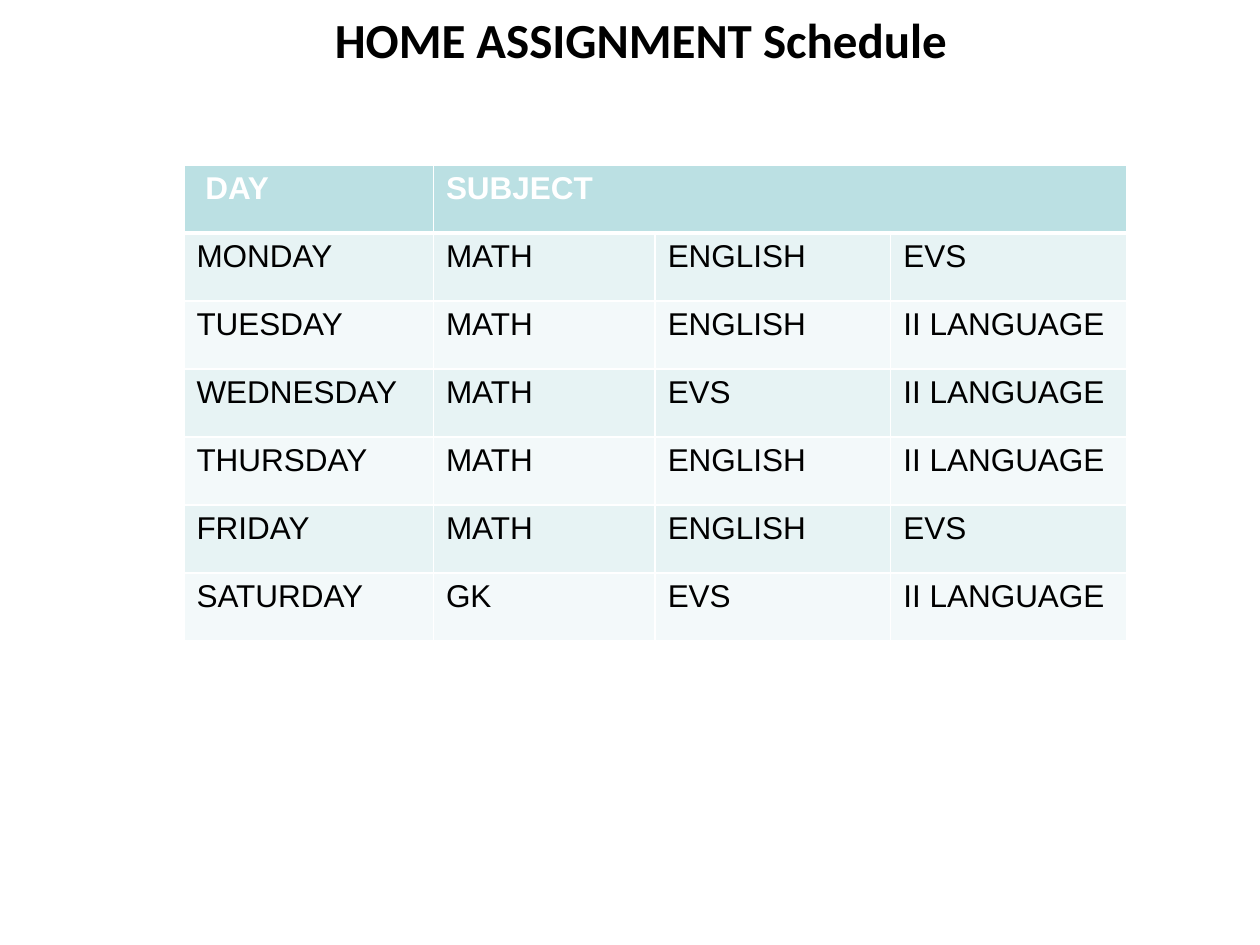
import pptx
import pptx.dml.color
import pptx.enum.text
import pptx.oxml.ns
import pptx.util
from lxml import etree

# Content
TITLE = "HOME ASSIGNMENT Schedule"
HEADER = (" DAY", "SUBJECT", "", "")
SCHEDULE = [
    ("MONDAY", "MATH", "ENGLISH", "EVS"),
    ("TUESDAY", "MATH", "ENGLISH", "II LANGUAGE"),
    ("WEDNESDAY", "MATH", "EVS", "II LANGUAGE"),
    ("THURSDAY", "MATH", "ENGLISH", "II LANGUAGE"),
    ("FRIDAY", "MATH", "ENGLISH", "EVS"),
    ("SATURDAY", "GK", "EVS", "II LANGUAGE"),
]
COLORS = {"black": "000000", "white": "FFFFFF", "header": "BBE0E3",
          "odd": "E7F3F4", "even": "F3F9FA"}

# Layout in inches
SLIDE_SIZE = (10, 7.5)
LEFT = 1.46
TITLE_BOX = (LEFT, 0.03, 7.25, 0.57)
TABLE_TOP = 1.31
COLUMN_WIDTHS = (1.98, 1.76, 1.87, 1.87)
ROW_HEIGHT = 0.54


def inches(values):
    return [pptx.util.Inches(value) for value in values]


def rgb(name):
    return pptx.dml.color.RGBColor.from_string(COLORS[name])


def style_text(paragraph, font_name, size, color, bold):
    for run in paragraph.runs:
        run.font.name = font_name
        run.font.size = pptx.util.Pt(size)
        run.font.bold = bold
        run.font.color.rgb = rgb(color)


def add_borders(cell, widths):
    """Draw white borders; widths maps each side's tag to points."""
    properties = cell._tc.get_or_add_tcPr()
    for tag, points in widths.items():
        line = etree.SubElement(properties, pptx.oxml.ns.qn(f"a:{tag}"),
                                w=str(pptx.util.Pt(points)))
        fill = etree.SubElement(line, pptx.oxml.ns.qn("a:solidFill"))
        etree.SubElement(fill, pptx.oxml.ns.qn("a:srgbClr"), val=COLORS["white"])


def add_title(slide):
    text_frame = slide.shapes.add_textbox(*inches(TITLE_BOX)).text_frame
    text_frame.word_wrap = True
    text_frame.text = TITLE
    paragraph = text_frame.paragraphs[0]
    paragraph.alignment = pptx.enum.text.PP_ALIGN.CENTER
    style_text(paragraph, "Calibri", 28, "black", True)


def add_schedule(slide):
    rows = [HEADER] + SCHEDULE
    frame = inches((LEFT, TABLE_TOP, sum(COLUMN_WIDTHS), ROW_HEIGHT * len(rows)))
    table = slide.shapes.add_table(len(rows), len(COLUMN_WIDTHS), *frame).table
    for column, width in zip(table.columns, inches(COLUMN_WIDTHS)):
        column.width = width
    table.cell(0, 1).merge(table.cell(0, 3))

    for row_index, row in enumerate(rows):
        table.rows[row_index].height = pptx.util.Inches(ROW_HEIGHT)
        is_header = row_index == 0
        fill = "header" if is_header else "odd" if row_index % 2 else "even"
        # The line below the header is thicker than the others
        borders = {"lnL": 1, "lnR": 1, "lnT": 3 if row_index == 1 else 1,
                   "lnB": 3 if is_header else 1}
        for column_index, text in enumerate(row):
            cell = table.cell(row_index, column_index)
            add_borders(cell, borders)
            cell.fill.solid()
            cell.fill.fore_color.rgb = rgb(fill)
            if text:
                cell.text_frame.text = text
                style_text(cell.text_frame.paragraphs[0], "Arial", 18,
                           "white" if is_header else "black", is_header)


def main():
    presentation = pptx.Presentation()
    presentation.slide_width, presentation.slide_height = inches(SLIDE_SIZE)
    slide = presentation.slides.add_slide(presentation.slide_layouts[6])
    add_title(slide)
    add_schedule(slide)
    presentation.save("out.pptx")


if __name__ == "__main__":
    main()
